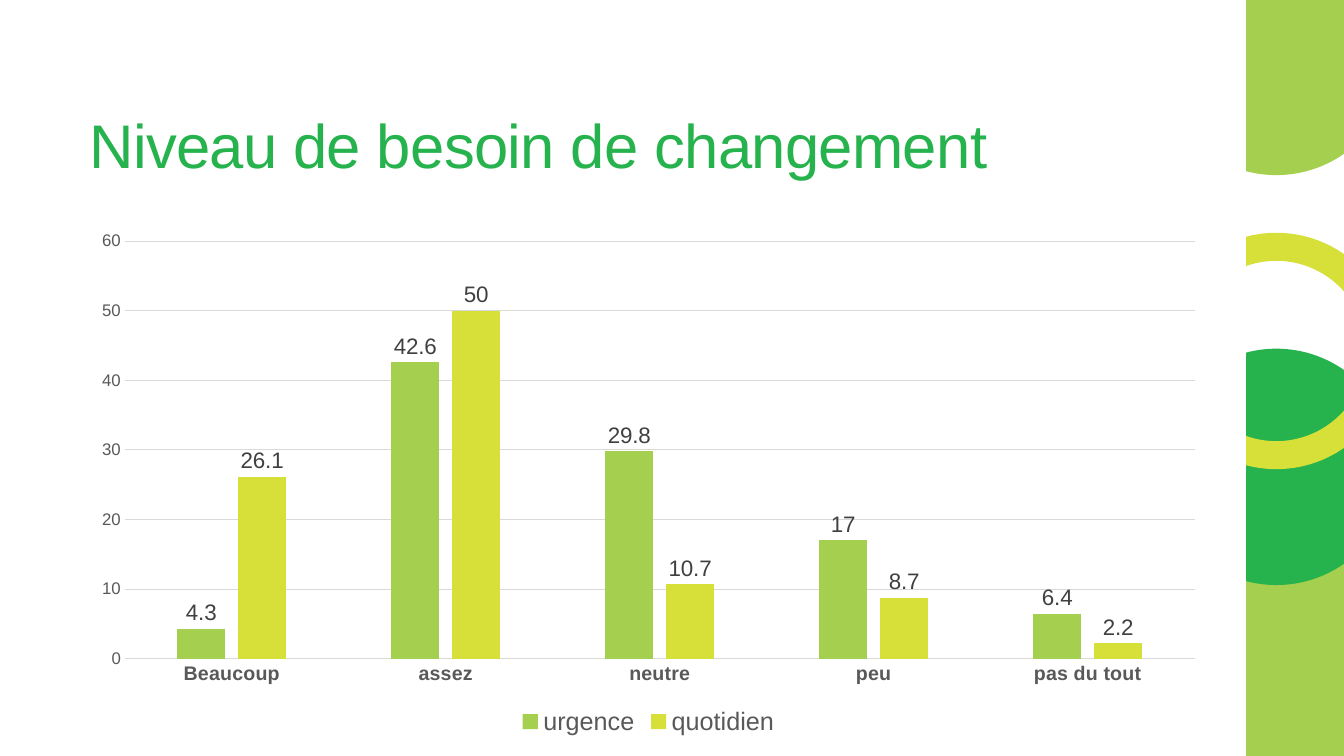
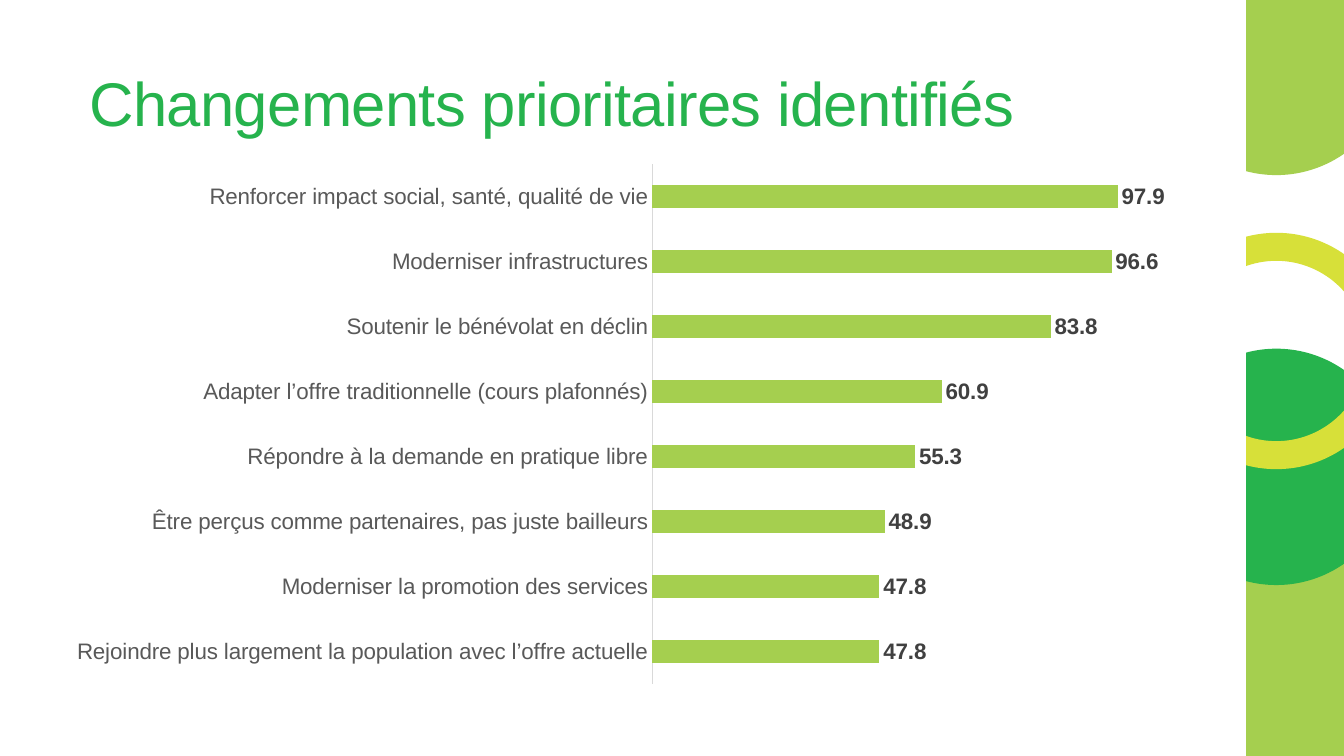
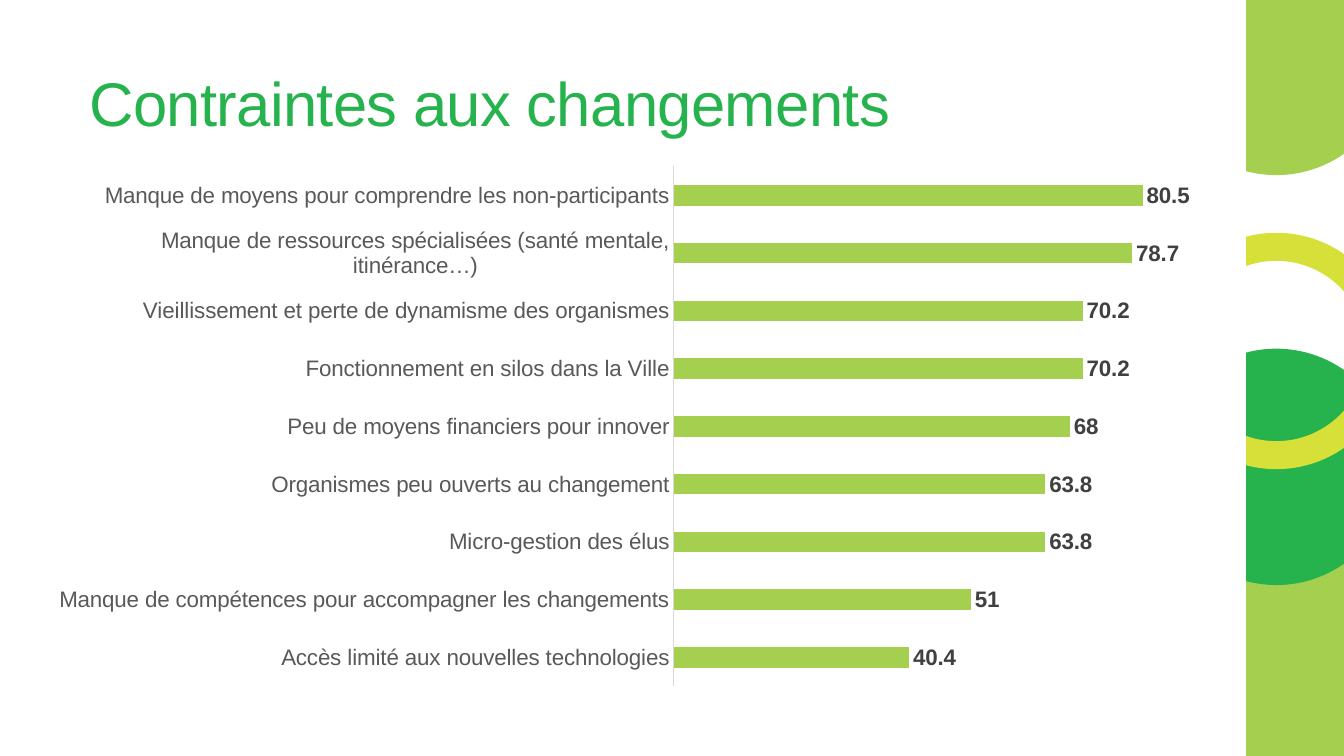
from dataclasses import dataclass

from lxml import etree
from pptx import Presentation
from pptx.chart.data import CategoryChartData
from pptx.dml.color import RGBColor
from pptx.enum.chart import XL_CHART_TYPE, XL_LABEL_POSITION, XL_LEGEND_POSITION, XL_TICK_MARK
from pptx.enum.shapes import MSO_SHAPE
from pptx.enum.text import MSO_ANCHOR, MSO_AUTO_SIZE, PP_ALIGN
from pptx.oxml.ns import qn
from pptx.util import Cm, Pt

COLUMN, BAR = XL_CHART_TYPE.COLUMN_CLUSTERED, XL_CHART_TYPE.BAR_CLUSTERED
OUTSIDE_END = XL_LABEL_POSITION.OUTSIDE_END
LEGEND_BOTTOM = XL_LEGEND_POSITION.BOTTOM
NO_TICK = XL_TICK_MARK.NONE
RECT, OVAL = MSO_SHAPE.RECTANGLE, MSO_SHAPE.OVAL
BOTTOM = MSO_ANCHOR.BOTTOM
LEFT = PP_ALIGN.LEFT
NO_AUTOFIT = MSO_AUTO_SIZE.NONE

TITLE_ONLY = 5
WIDTH, HEIGHT = 33.87, 19.05


@dataclass(frozen=True)
class Theme:
    font: str = "Arial"
    white: str = "FFFFFF"
    lime: str = "A5CF4F"
    yellow: str = "D7E039"
    green: str = "26B34D"
    black: str = "000000"
    grid: str = "D9D9D9"
    axis_text: str = "595959"
    label_text: str = "404040"
    title: int = 44
    legend: int = 18
    label: int = 16
    category: int = 14
    value: int = 12
    base: int = 10
    ring: int = 20
    hairline: float = 0.75


def rgb(value):
    return RGBColor.from_string(value)


class Deck:
    """Holds the theme, the presentation and the current slide."""

    def __init__(self, theme):
        self.theme = theme
        self.prs = Presentation()
        self.prs.slide_width, self.prs.slide_height = Cm(WIDTH), Cm(HEIGHT)
        self.layout = self.prs.slide_layouts[TITLE_ONLY]
        self.slide = None

    def set_font(self, font, size, color, bold=False):
        font.name, font.size, font.bold = self.theme.font, Pt(size), bold
        font.color.rgb = rgb(color)

    def add_slide(self, title, title_height):
        first = self.slide is None
        self.slide = self.prs.slides.add_slide(self.layout)
        if first:
            self.add_band()
        self.add_title(title, title_height)

    def add_title(self, text, height):
        sp = self.slide.shapes.title
        sp.left, sp.top, sp.width, sp.height = Cm(2), Cm(1.02), Cm(27.53), Cm(height)
        tf = sp.text_frame
        tf.text = text
        tf.word_wrap, tf.auto_size, tf.vertical_anchor = True, NO_AUTOFIT, BOTTOM
        p = tf.paragraphs[0]
        p.alignment, p.line_spacing = LEFT, 0.9
        self.set_font(p.font, self.theme.title, self.theme.green)
        p.runs[0].font._element.set("spc", "-50")

    def add_layout_shape(self, kind, left, top, width, height, fill=None, line=None):
        """Draw a shape and move it to the layout, so every slide shows it."""
        sp = self.slide.shapes.add_shape(kind, Cm(left), Cm(top), Cm(width), Cm(height))
        sp.shadow.inherit = False
        if fill:
            sp.fill.solid()
            sp.fill.fore_color.rgb = rgb(fill)
        else:
            sp.fill.background()
        if line:
            sp.line.color.rgb = rgb(line)
            sp.line.width = Pt(self.theme.ring)
        else:
            sp.line.fill.background()
        self.layout.shapes._spTree.append(sp._element)

    def add_band(self):
        t = self.theme
        left, ring_left, diameter = 31.4, 29.54, 5.25
        for top, height, color in ((14.11, 4.94, t.lime), (0, 3.73, t.lime), (11.13, 2.97, t.green)):
            self.add_layout_shape(RECT, left, top, WIDTH - left, height, color)
        for top, fill, line in ((-1.19, None, t.lime), (9.14, t.green, t.green), (6.22, None, t.yellow)):
            self.add_layout_shape(OVAL, ring_left, top, diameter, diameter, fill, line)
        # White strip that trims the rings to the band's left edge
        self.add_layout_shape(RECT, left - 2.46, 0, 2.46, HEIGHT, t.white)

    def add_chart(self, kind, box, categories, series, maximum, gap, overlap, bold_labels, category_size):
        """series is a list of (name, values, colour)."""
        t = self.theme
        data = CategoryChartData()
        data.categories = categories
        for name, values, _ in series:
            data.add_series(name, values)
        chart = self.slide.shapes.add_chart(kind, *map(Cm, box), data).chart
        chart.has_title = chart.has_legend = False
        self.set_font(chart.font, t.base, t.black)

        plot = chart.plots[0]
        plot.gap_width, plot.overlap, plot.vary_by_categories = gap, overlap, False
        for ser, (_, _, color) in zip(plot.series, series):
            ser.format.fill.solid()
            ser.format.fill.fore_color.rgb = rgb(color)
            ser.invert_if_negative = False
            labels = ser.data_labels
            labels.show_value, labels.position = True, OUTSIDE_END
            self.set_font(labels.font, t.label, t.label_text, bold_labels)

        cat, val = chart.category_axis, chart.value_axis
        for axis in (cat, val):
            axis.major_tick_mark = axis.minor_tick_mark = NO_TICK
            axis.has_major_gridlines = False
        self.set_line(cat.format.line)
        self.set_font(cat.tick_labels.font, category_size, t.axis_text, kind == COLUMN)
        val.minimum_scale, val.maximum_scale = 0, maximum
        return chart

    def set_line(self, line):
        line.color.rgb, line.width = rgb(self.theme.grid), Pt(self.theme.hairline)

    def add_column_chart(self, box, categories, series, maximum, step):
        t = self.theme
        chart = self.add_chart(COLUMN, box, categories, series, maximum, 219, -27, False, t.category)
        val = chart.value_axis
        val.major_unit, val.has_major_gridlines = step, True
        self.set_line(val.major_gridlines.format.line)
        val.format.line.fill.background()
        self.set_font(val.tick_labels.font, t.value, t.axis_text)
        chart.has_legend = True
        chart.legend.position, chart.legend.include_in_layout = LEGEND_BOTTOM, False
        self.set_font(chart.legend.font, t.legend, t.axis_text)

    def add_ranking_chart(self, box, ranking, maximum, plot_width):
        """ranking is a list of (category, value), best first."""
        categories, values = zip(*ranking)
        t = self.theme
        chart = self.add_chart(BAR, box, categories, [("Series 1", values, t.lime)],
                               maximum, 182, 0, True, t.label)
        chart.category_axis.reverse_order = True
        chart.value_axis.visible = False
        self.set_plot_area(chart, 0.39, 0.1, plot_width, 0.87)

    def set_plot_area(self, chart, x, y, w, h):
        area = chart._chartSpace.chart.plotArea
        for old in area.findall(qn("c:layout")):
            area.remove(old)
        layout = etree.Element(qn("c:layout"))
        manual = etree.SubElement(layout, qn("c:manualLayout"))
        for tag, value in (("layoutTarget", "inner"), ("xMode", "edge"), ("yMode", "edge"),
                           ("x", x), ("y", y), ("w", w), ("h", h)):
            etree.SubElement(manual, qn("c:" + tag)).set("val", str(value))
        area.insert(0, layout)


def main():
    theme = Theme()
    deck = Deck(theme)

    # Need for change
    deck.add_slide("Niveau de besoin de changement", 3.68)
    deck.add_column_chart(
        (2, 5.59, 28.68, 13.08),
        ["Beaucoup", "assez", "neutre", "peu", "pas du tout"],
        [("urgence", (4.3, 42.6, 29.8, 17, 6.4), theme.lime),
         ("quotidien", (26.1, 50, 10.7, 8.7, 2.2), theme.yellow)],
        maximum=60, step=10)

    # Priority changes
    deck.add_slide("Changements prioritaires identifiés", 2.64)
    deck.add_ranking_chart((1.07, 2.62, 39.4, 15.06), [
        ("Renforcer impact social, santé, qualité de vie", 97.9),
        ("Moderniser infrastructures", 96.6),
        ("Soutenir le bénévolat en déclin", 83.8),
        ("Adapter l’offre traditionnelle (cours plafonnés)", 60.9),
        ("Répondre à la demande en pratique libre", 55.3),
        ("Être perçus comme partenaires, pas juste bailleurs", 48.9),
        ("Moderniser la promotion des services", 47.8),
        ("Rejoindre plus largement la population avec l’offre actuelle", 47.8),
    ], maximum=120, plot_width=0.365)

    # Constraints
    deck.add_slide("Contraintes aux changements", 2.64)
    deck.add_ranking_chart((1.07, 2.69, 40.79, 15.06), [
        ("Manque de moyens pour comprendre les non-participants", 80.5),
        ("Manque de ressources spécialisées (santé mentale, itinérance…)", 78.7),
        ("Vieillissement et perte de dynamisme des organismes", 70.2),
        ("Fonctionnement en silos dans la Ville", 70.2),
        ("Peu de moyens financiers pour innover", 68),
        ("Organismes peu ouverts au changement", 63.8),
        ("Micro-gestion des élus", 63.8),
        ("Manque de compétences pour accompagner les changements", 51),
        ("Accès limité aux nouvelles technologies", 40.4),
    ], maximum=90, plot_width=0.324)

    deck.prs.save("out.pptx")


if __name__ == "__main__":
    main()
